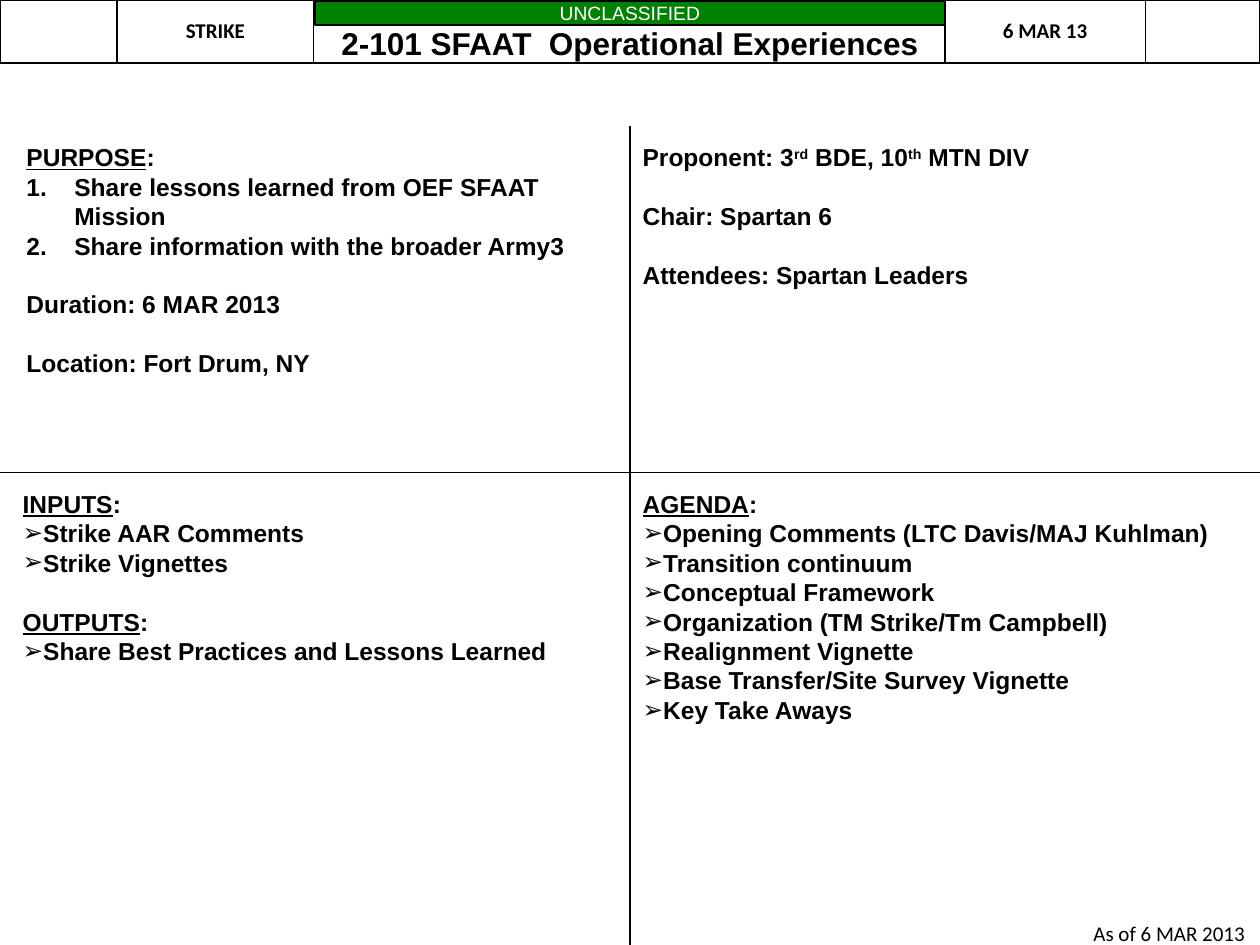
import pptx
import pptx.dml.color
import pptx.enum.shapes
import pptx.enum.text
import pptx.oxml.ns
import pptx.util
import lxml.etree

Inches, Pt = pptx.util.Inches, pptx.util.Pt
ALIGN, ANCHOR = pptx.enum.text.PP_ALIGN, pptx.enum.text.MSO_ANCHOR
COLORS = {name: pptx.dml.color.RGBColor.from_string(value) for name, value in
          {"ink": "000000", "paper": "FFFFFF", "banner": "008000"}.items()}
WIDTH, HEIGHT = 10, 7.5
BLANK_LINE = Pt(16.8)


def add_xml(parent, tag, **attributes):
    return lxml.etree.SubElement(parent, pptx.oxml.ns.qn(tag), attributes)


def set_font(paragraph, name, size, bold=False, color="ink"):
    paragraph.font.name = name
    paragraph.font.size = Pt(size)
    paragraph.font.bold = bold
    paragraph.font.color.rgb = COLORS[color]


presentation = pptx.Presentation()
presentation.slide_width, presentation.slide_height = Inches(WIDTH), Inches(HEIGHT)
# The Comparison layout has a title and four body placeholders
slide = presentation.slides.add_slide(presentation.slide_layouts[4])

# Header table
column_widths = [0.93, 1.56, 5.01, 1.59, 0.91]
labels = ["", "STRIKE", "", "6 MAR 13", ""]
table = slide.shapes.add_table(1, len(labels), 0, 0, Inches(WIDTH), Inches(0.5)).table
table.rows[0].height = Inches(0.5)
for column, (width, label) in enumerate(zip(column_widths, labels)):
    table.columns[column].width = Inches(width)
    cell = table.cell(0, column)
    cell.vertical_anchor = ANCHOR.MIDDLE
    properties = cell._tc.get_or_add_tcPr()
    for side in ("a:lnL", "a:lnR", "a:lnT", "a:lnB"):
        border = add_xml(properties, side, w=str(Pt(1)))
        add_xml(add_xml(border, "a:solidFill"), "a:srgbClr", val=str(COLORS["ink"]))
    cell.fill.solid()
    cell.fill.fore_color.rgb = COLORS["paper"]
    paragraph = cell.text_frame.paragraphs[0]
    paragraph.text = label
    paragraph.alignment = ALIGN.CENTER
    set_font(paragraph, "Calibri", 12, bold=True)

# Classification banner
banner = slide.shapes.add_shape(pptx.enum.shapes.MSO_SHAPE.RECTANGLE, Inches(WIDTH / 4),
                                Inches(0.01), Inches(WIDTH / 2), Inches(0.19))
banner.shadow.inherit = False
banner.fill.solid()
banner.fill.fore_color.rgb = COLORS["banner"]
banner.line.color.rgb = COLORS["ink"]
banner.line.width = Pt(1)
frame = banner.text_frame
frame.margin_left = frame.margin_right = frame.margin_top = frame.margin_bottom = 0
frame.vertical_anchor = ANCHOR.MIDDLE
paragraph = frame.paragraphs[0]
paragraph.text = "UNCLASSIFIED"
paragraph.alignment = ALIGN.CENTER
set_font(paragraph, "Arial", 11, color="paper")

# Title, brought in front of the header table
title = slide.shapes.title
title.left, title.top = Inches(WIDTH / 4), Inches(0.14)
title.width, title.height = Inches(WIDTH / 2), Inches(0.4)
title.text_frame.auto_size = pptx.enum.text.MSO_AUTO_SIZE.NONE
title.text_frame.vertical_anchor = ANCHOR.TOP
paragraph = title.text_frame.paragraphs[0]
paragraph.text = "2-101 SFAAT  Operational Experiences"
paragraph.alignment = ALIGN.CENTER
set_font(paragraph, "Arial", 18, bold=True)
title.element.getparent().append(title.element)

# Quadrant dividers
for ends in [(WIDTH / 2, 1, WIDTH / 2, HEIGHT), (0, HEIGHT / 2, WIDTH, HEIGHT / 2)]:
    divider = slide.shapes.add_connector(pptx.enum.shapes.MSO_CONNECTOR.STRAIGHT,
                                         *[Inches(end) for end in ends])
    divider.line.color.rgb = COLORS["ink"]
    divider.line.width = Pt(0.75)
    add_xml(divider.element.spPr, "a:effectLst")

# Quadrants: placeholder index, box, and paragraphs as (kind, runs);
# a "^" marks a superscript run, and "gap" leaves a line free above
UPPER, LOWER = 1.08, 3.83
quadrants = [
    (1, (0.11, UPPER, 4.81, 1.99), [
        ("heading", ["PURPOSE", ":"]),
        ("number", ["Share lessons learned from OEF SFAAT Mission"]),
        ("number", ["Share information with the broader Army3"]),
        ("gap", ["Duration: 6 MAR 2013"]),
        ("gap", ["Location: Fort Drum, NY"])]),
    (3, (WIDTH / 2, UPPER, 4.92, 1.28), [
        ("plain", ["Proponent: 3", "^rd", " BDE, 10", "^th", " MTN DIV"]),
        ("gap", ["Chair: Spartan 6"]),
        ("gap", ["Attendees: Spartan Leaders"])]),
    (2, (0.08, LOWER, 4.92, 1.51), [
        ("heading", ["INPUTS", ":"]),
        ("bullet", ["Strike AAR Comments"]),
        ("bullet", ["Strike Vignettes"]),
        ("gap heading", ["OUTPUTS", ":"]),
        ("bullet", ["Share Best Practices and Lessons Learned"])]),
    (4, (WIDTH / 2, LOWER, 4.92, 2.22), [
        ("heading", ["AGENDA", ":"]),
        ("bullet", ["Opening Comments (LTC Davis/MAJ Kuhlman)"]),
        ("bullet", ["Transition continuum"]),
        ("bullet", ["Conceptual Framework"]),
        ("bullet", ["Organization (TM Strike/Tm Campbell)"]),
        ("bullet", ["Realignment Vignette"]),
        ("bullet", ["Base Transfer/Site Survey Vignette"]),
        ("bullet", ["Key Take Aways"])]),
]
placeholders = {shape.placeholder_format.idx: shape for shape in slide.placeholders}
for index, box, paragraphs in quadrants:
    body = placeholders[index]
    body.left, body.top, body.width, body.height = [Inches(length) for length in box]
    frame = body.text_frame
    frame.word_wrap = True
    frame.auto_size = pptx.enum.text.MSO_AUTO_SIZE.NONE
    frame.vertical_anchor = ANCHOR.TOP
    for position, (kind, runs) in enumerate(paragraphs):
        paragraph = frame.add_paragraph() if position else frame.paragraphs[0]
        paragraph.space_before = BLANK_LINE if "gap" in kind else Pt(0)
        properties = paragraph._p.get_or_add_pPr()
        indent = Inches(0.38) if kind == "number" else 0
        properties.set("marL", str(indent))
        properties.set("indent", str(-indent))
        if kind == "number":
            add_xml(properties, "a:buFont", typeface="Arial")
            add_xml(properties, "a:buAutoNum", type="arabicPeriod")
        elif kind == "bullet":
            add_xml(properties, "a:buFont", typeface="Arial")
            add_xml(properties, "a:buChar", char="➢")
        else:
            add_xml(properties, "a:buNone")
        set_font(paragraph, "Arial", 14, bold=True)
        for number, text in enumerate(runs):
            run = paragraph.add_run()
            run.text = text.lstrip("^")
            if text.startswith("^"):
                run._r.get_or_add_rPr().set("baseline", "30000")
            if "heading" in kind and number == 0:
                run.font.underline = True

# Date note
note = slide.shapes.add_textbox(Inches(8.58), Inches(7.26), Inches(1.5), Inches(0.3))
note.text_frame.word_wrap = True
paragraph = note.text_frame.paragraphs[0]
paragraph.text = "As of 6 MAR 2013"
set_font(paragraph, "Calibri", 12)

presentation.save("out.pptx")
